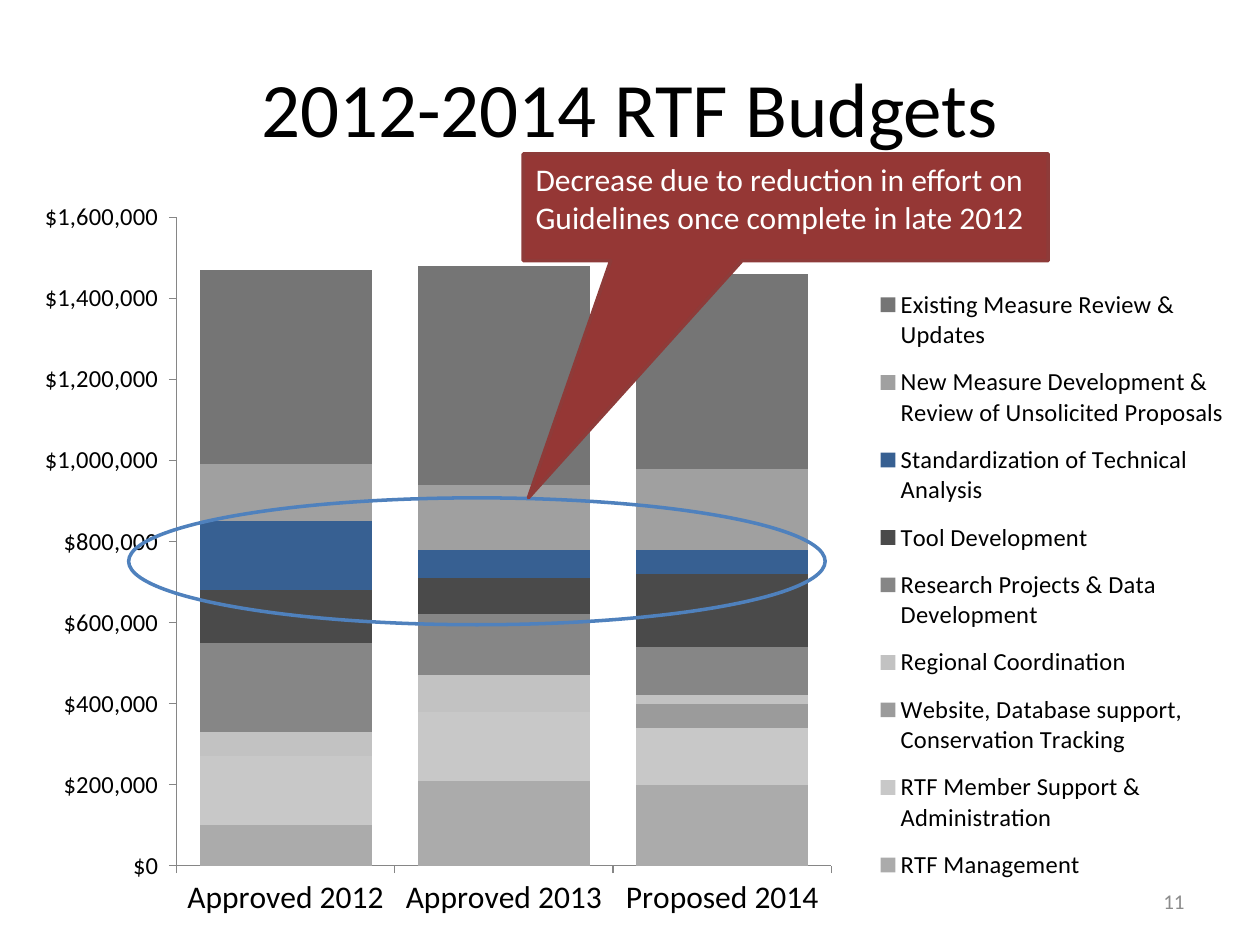
from dataclasses import dataclass
from typing import Any

from pptx import Presentation
from pptx.chart.data import CategoryChartData
from pptx.dml.color import RGBColor
from pptx.enum.chart import XL_CHART_TYPE as ChartType, XL_LEGEND_POSITION as LegendSide
from pptx.enum.chart import XL_TICK_MARK as Tick
from pptx.enum.shapes import MSO_SHAPE as Shape
from pptx.enum.text import MSO_ANCHOR as Anchor, PP_ALIGN as Align
from pptx.oxml import parse_xml
from pptx.oxml.ns import nsdecls
from pptx.util import Pt

COLORS = {
    "text": "000000", "white": "FFFFFF", "number": "8C8C8C", "axis": "868686",
    "ring": "4F81BD", "callout": "953735", "callout_edge": "8E3B39",
}
YEARS = ["Approved 2012", "Approved 2013", "Proposed 2014"]
BUDGETS = [
    ("RTF Management", (100000, 210000, 200000), "ABABAB"),
    ("RTF Member Support & Administration", (170000, 170000, 140000), "C8C8C8"),
    ("Website, Database support, Conservation Tracking", (0, 0, 60000), "9B9B9B"),
    ("Regional Coordination", (60000, 90000, 20000), "C2C2C2"),
    ("Research Projects & Data Development", (220000, 150000, 120000), "868686"),
    ("Tool Development", (130000, 90000, 180000), "4A4A4A"),
    ("Standardization of Technical Analysis", (170000, 70000, 60000), "376092"),
    ("New Measure Development & Review of Unsolicited Proposals", (140000, 160000, 200000), "A0A0A0"),
    ("Existing Measure Review & Updates", (480000, 540000, 480000), "757575"),
]


def rgb(value):
    """Turn a hex string into a colour."""
    return RGBColor.from_string(value)


def layout_xml(x, y, w, h, target=""):
    """Build a manual chart layout from fractions of the chart area."""
    edges = "".join(f'<c:{side}Mode val="edge"/>' for side in "xy")
    sizes = "".join(f'<c:{key} val="{val}"/>' for key, val in zip("xywh", (x, y, w, h)))
    return parse_xml(
        f'<c:layout {nsdecls("c")}><c:manualLayout>{target}{edges}{sizes}'
        "</c:manualLayout></c:layout>"
    )


@dataclass
class Painter:
    """Hold the style and the current page."""

    page: Any
    font: str = "Calibri"

    def add_text(self, box, text, size, color, align, anchor):
        """Put one styled run in a box."""
        frame = box.text_frame
        frame.word_wrap = True
        frame.vertical_anchor = anchor
        para = frame.paragraphs[0]
        para.alignment = align
        span = para.add_run()
        span.text = text
        span.font.name = self.font
        span.font.size = Pt(size)
        span.font.color.rgb = rgb(COLORS[color])

    def label(self, area, text, size, color, align):
        """Add a text box."""
        box = self.page.shapes.add_textbox(*map(Pt, area))
        self.add_text(box, text, size, color, align, Anchor.MIDDLE)

    def shape(self, kind, area, line, fill=None):
        """Add an outlined preset shape."""
        shape = self.page.shapes.add_shape(kind, *map(Pt, area))
        shape.shadow.inherit = False
        shape.line.color.rgb = rgb(COLORS[line])
        shape.line.width = Pt(2)
        if fill:
            shape.fill.solid()
            shape.fill.fore_color.rgb = rgb(COLORS[fill])
        else:
            shape.fill.background()
        return shape

    def callout(self, area, tip, text):
        """Add a filled callout with its tip at a relative offset."""
        box = self.shape(Shape.RECTANGULAR_CALLOUT, area, "callout_edge", "callout")
        box.adjustments[0], box.adjustments[1] = tip
        self.add_text(box, text, 18, "white", Align.LEFT, Anchor.TOP)

    def style_axis(self, axis, size):
        """Style one chart axis."""
        axis.has_major_gridlines = False
        axis.major_tick_mark = Tick.OUTSIDE
        axis.minor_tick_mark = Tick.NONE
        axis.format.line.color.rgb = rgb(COLORS["axis"])
        axis.tick_labels.font.size = Pt(size)

    def place(self, parent, index, layout):
        """Replace the layout of a chart part."""
        for old in parent.xpath("c:layout"):
            parent.remove(old)
        parent.insert(index, layout)

    def stacked_chart(self, area, categories, rows):
        """Add the stacked column chart."""
        data = CategoryChartData()
        data.categories = categories
        for name, values, _ in rows:
            data.add_series(name, values)
        frame = self.page.shapes.add_chart(ChartType.COLUMN_STACKED, *map(Pt, area), data)
        chart = frame.chart
        chart.has_title = False
        chart.font.name = self.font
        chart.font.size = Pt(18)
        chart.font.color.rgb = rgb(COLORS["text"])
        plot = chart.plots[0]
        plot.gap_width = 27
        plot.overlap = 100
        plot.vary_by_categories = False
        for series, (_, _, color) in zip(plot.series, rows):
            series.format.fill.solid()
            series.format.fill.fore_color.rgb = rgb(color)
        self.style_axis(chart.category_axis, 18)
        self.style_axis(chart.value_axis, 14)
        chart.value_axis.minimum_scale = 0
        chart.value_axis.maximum_scale = 1600000
        chart.value_axis.major_unit = 200000
        labels = chart.value_axis.tick_labels
        labels.number_format = '"$"#,##0_);\\("$"#,##0\\)'
        labels.number_format_is_linked = False
        chart.has_legend = True
        chart.legend.position = LegendSide.RIGHT
        chart.legend.include_in_layout = False
        chart.legend.font.size = Pt(14)
        inner = '<c:layoutTarget val="inner"/>'
        plot_area = chart.element.xpath("c:chart/c:plotArea")[0]
        legend = chart.element.xpath("c:chart/c:legend")[0]
        self.place(plot_area, 0, layout_xml(0.14, 0.08, 0.52, 0.82, inner))
        self.place(legend, 1, layout_xml(0.69, 0.15, 0.29, 0.79))


def main():
    """Build the budget slide."""
    deck = Presentation()
    deck.slide_width, deck.slide_height = Pt(720), Pt(540)
    painter = Painter(deck.slides.add_slide(deck.slide_layouts[6]))
    painter.stacked_chart((0, 88, 720, 452), YEARS, BUDGETS)
    painter.label((36, 16, 648, 90), "2012-2014 RTF Budgets", 44, "text", Align.CENTER)
    painter.shape(Shape.OVAL, (73.5, 284.5, 398, 72.5), "ring")
    painter.callout(
        (299, 88, 300, 61), (-0.49, 2.72),
        "Decrease due to reduction in effort on Guidelines once complete in late 2012",
    )
    painter.label((516, 500.5, 168, 28.5), "11", 12, "number", Align.RIGHT)
    deck.save("out.pptx")


if __name__ == "__main__":
    main()
